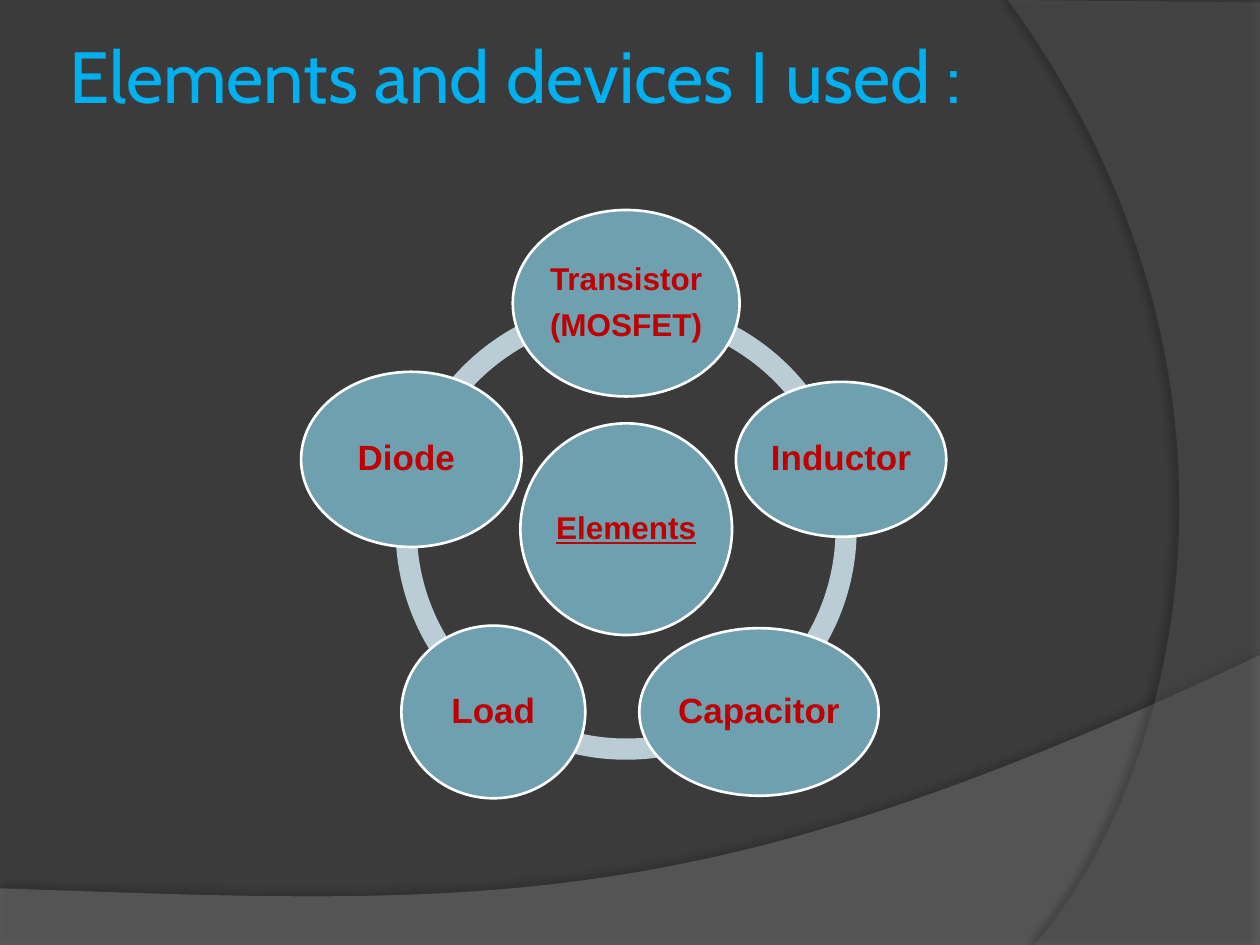
from math import cos, radians, sin

from lxml import etree
from pptx import Presentation
from pptx.dml.color import RGBColor
from pptx.enum.shapes import MSO_SHAPE
from pptx.enum.text import MSO_ANCHOR, PP_ALIGN
from pptx.oxml.ns import qn
from pptx.util import Inches, Pt

OVAL, ARC = MSO_SHAPE.OVAL, MSO_SHAPE.BLOCK_ARC
TOP, MIDDLE = MSO_ANCHOR.TOP, MSO_ANCHOR.MIDDLE
LEFT, CENTER = PP_ALIGN.LEFT, PP_ALIGN.CENTER

COLORS = {
    "background": "3B3B3B",
    "hill": "7F7F7F",
    "side": "5E5E5E",
    "shadow": "000000",
    "title": "00B0F0",
    "ring": "BACDD4",
    "node": "6EA0B0",
    "outline": "FFFFFF",
    "label": "C00000",
}

NODES = [
    (["Transistor", "(MOSFET)"], 1.8, 1.48, 18),
    (["Inductor"], 1.67, 1.23, 20),
    (["Capacitor"], 1.9, 1.33, 20),
    (["Load"], 1.46, 1.37, 20),
    (["Diode "], 1.75, 1.39, 20),
]


def rgb(name):
    return RGBColor.from_string(COLORS[name])


def paint(sp, color):
    sp.shadow.inherit = False
    sp.fill.solid()
    sp.fill.fore_color.rgb = rgb(color)
    sp.line.fill.background()


def add_alpha(color_el, percent):
    etree.SubElement(color_el, qn("a:alpha"), val=str(percent * 1000))


def add_run(p, text, size, font, color):
    r = p.add_run()
    r.text = text
    r.font.size = Pt(size)
    r.font.name = font
    r.font.color.rgb = rgb(color)
    return r


def bezier(p0, p1, p2, p3, steps=60):
    for i in range(1, steps + 1):
        t = i / steps
        u = 1 - t
        yield tuple(u**3 * a + 3 * u * u * t * b + 3 * u * t * t * c + t**3 * d
                    for a, b, c, d in zip(p0, p1, p2, p3))


def add_swoosh(s, corners, curve, color, opacity, shadow):
    points = [(Inches(x), Inches(y)) for x, y in corners + list(bezier(*curve))]
    fb = s.shapes.build_freeform(*points[0])
    fb.add_line_segments(points[1:], close=True)
    sp = fb.convert_to_shape()
    paint(sp, color)
    sp_pr = sp._element.spPr
    add_alpha(sp_pr.find(".//" + qn("a:srgbClr")), opacity)
    distance, direction, strength = shadow
    effect = etree.SubElement(
        sp_pr.find(qn("a:effectLst")), qn("a:outerShdw"), blurRad=str(Pt(4)),
        dist=str(Pt(distance)), dir=str(direction * 60000), rotWithShape="0")
    add_alpha(etree.SubElement(effect, qn("a:srgbClr"), val=COLORS["shadow"]), strength)
    return sp


def add_backdrop(s, width, height):
    s.background.fill.solid()
    s.background.fill.fore_color.rgb = rgb("background")
    hill = add_swoosh(
        s, [(0, 7.05), (0, height), (width, height), (width, 5.2)],
        [(width, 5.2), (5.59, 7.29), (3.91, 7.19), (0, 7.05)],
        "hill", 45, (3.5, 270, 35))
    side = add_swoosh(
        s, [(width, 0.02), (width, height), (8.21, height)],
        [(8.21, height), (9.35, 6.19), (10.18, 3), (8, 0)],
        "side", 40, (4, 180, 45))
    for sp in (side, hill):
        s.shapes._spTree.insert(2, sp._element)


def add_title(s, left, top, width, height):
    sp = s.shapes.title
    sp.left, sp.top, sp.width, sp.height = map(Inches, (left, top, width, height))
    tf = sp.text_frame
    tf.word_wrap = True
    tf.vertical_anchor = TOP
    tf.margin_left = tf.margin_right = Inches(0.05)
    tf.margin_top = tf.margin_bottom = 0
    p = tf.paragraphs[0]
    p.alignment = LEFT
    add_run(p, "Elements and devices I used :", 41.4, "Cabin", "title")


def add_node(s, cx, cy, width, height, lines, size, underline=False):
    sp = s.shapes.add_shape(OVAL, Inches(cx - width / 2), Inches(cy - height / 2),
                            Inches(width), Inches(height))
    paint(sp, "node")
    sp.line.color.rgb = rgb("outline")
    sp.line.width = Pt(1.5)
    tf = sp.text_frame
    tf.word_wrap = False
    tf.vertical_anchor = MIDDLE
    tf.margin_left = tf.margin_right = tf.margin_top = tf.margin_bottom = Inches(0.03)
    for i, line in enumerate(lines):
        p = tf.add_paragraph() if i else tf.paragraphs[0]
        p.alignment = CENTER
        p.line_spacing = 0.9
        p.space_after = Pt(size * 0.4)
        r = add_run(p, line, size, "Arial", "label")
        r.font.bold = True
        if underline:
            r.font.underline = True


def add_radial_cycle(s, left, top, size):
    cx, cy = left + size / 2, top + size / 2
    radius = size * 0.49
    step = 360 / len(NODES)
    angles = [270 + step * i for i in range(len(NODES))]
    for angle in angles:
        arc = s.shapes.add_shape(ARC, Inches(left), Inches(top), Inches(size), Inches(size))
        paint(arc, "ring")
        arc.adjustments[0] = angle % 360 * 0.6
        arc.adjustments[1] = (angle + step) % 360 * 0.6
        arc.adjustments[2] = 0.046
    add_node(s, cx, cy, 1.68, 1.68, ["Elements"], 18, underline=True)
    for angle, (lines, width, height, points) in zip(angles, NODES):
        a = radians(angle)
        add_node(s, cx + radius * cos(a), cy + radius * sin(a), width, height, lines, points)


def main():
    prs = Presentation()
    prs.slide_width, prs.slide_height = Inches(10), Inches(7.5)
    s = prs.slides.add_slide(prs.slide_layouts[5])
    add_backdrop(s, 10, 7.5)
    add_title(s, 0.5, 0.25, 8.17, 1.25)
    add_radial_cycle(s, 3.14, 2.37, 3.66)
    prs.save("out.pptx")


if __name__ == "__main__":
    main()
